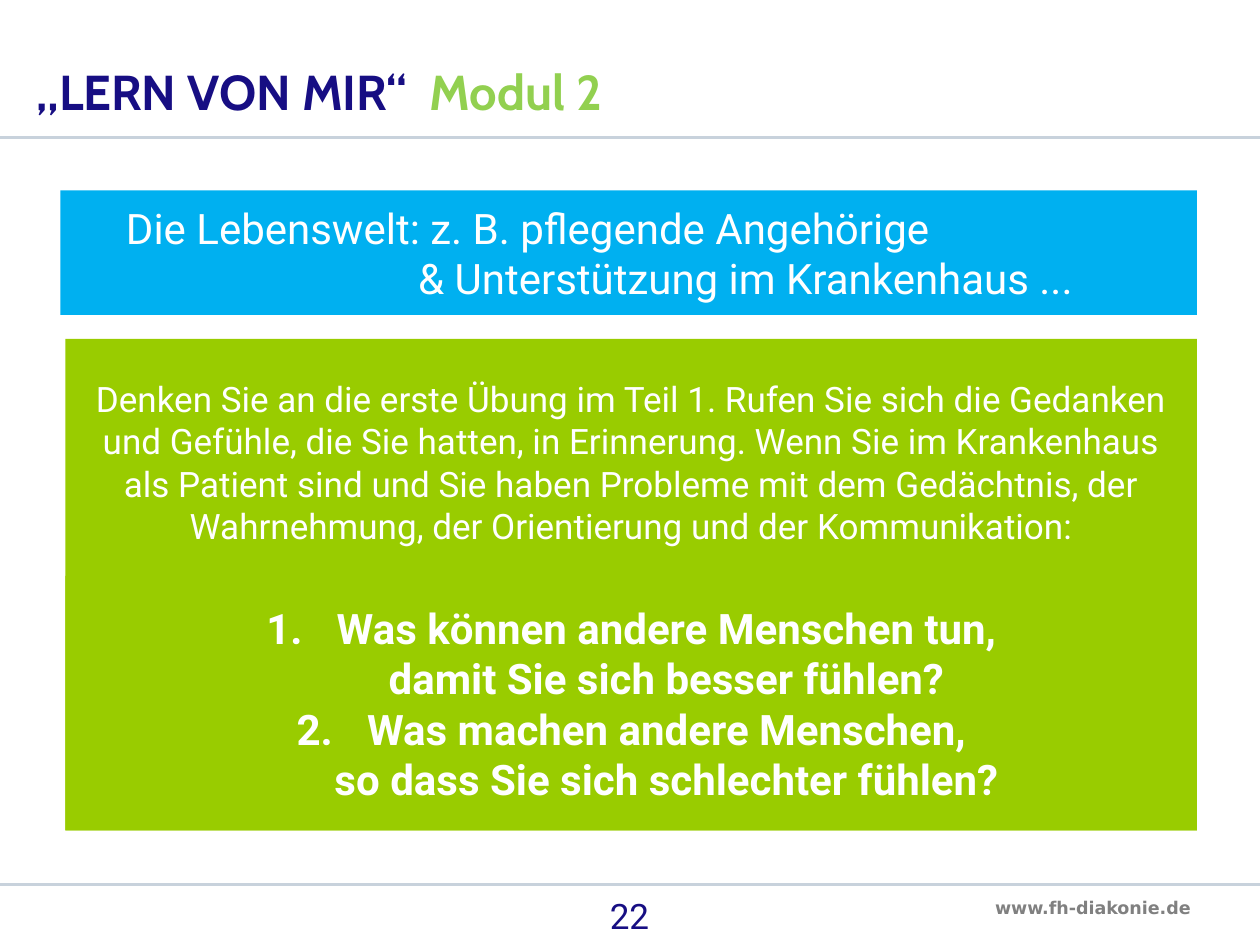
from dataclasses import dataclass

from lxml.etree import SubElement
from pptx import Presentation
from pptx.dml.color import RGBColor as Color
from pptx.enum.shapes import MSO_CONNECTOR as Connector, MSO_SHAPE as Shape
from pptx.enum.text import MSO_ANCHOR as Anchor, MSO_AUTO_SIZE as AutoSize, PP_ALIGN as Align
from pptx.oxml.ns import qn
from pptx.util import Cm, Pt


@dataclass(frozen=True)
class Theme:
    """Colours, fonts and type sizes of the slide."""
    navy: str = "170E83"
    light_green: str = "92D050"
    green: str = "99CC00"
    blue: str = "00B0F0"
    white: str = "FFFFFF"
    grey: str = "808080"
    rule: str = "C8D2DC"
    heading_font: str = "Cabin"
    body_font: str = "Roboto"
    footer_font: str = "DejaVu Sans"
    title_size: int = 28
    large_size: int = 24
    body_size: int = 20
    footer_size: int = 10


class SlideBuilder:
    """Holds the theme and the current slide."""

    def __init__(self, presentation, theme):
        """Add a title-only slide."""
        self.theme = theme
        self.slide = presentation.slides.add_slide(presentation.slide_layouts[5])

    def apply(self, target, values):
        """Set attributes from a dict of format values."""
        for name, value in values.items():
            setattr(target, name, value)

    def style(self, runs, size, color, font=None, bold=False):
        """Format text runs."""
        for run in runs:
            self.apply(run.font, {"name": font or self.theme.body_font,
                                  "size": Pt(size), "bold": bold})
            run.font.color.rgb = Color.from_string(color)

    def place(self, shape, box):
        """Move and size a shape, in centimetres."""
        self.apply(shape, dict(zip(("left", "top", "width", "height"), map(Cm, box))))

    def fill_text(self, frame, lines, align, **style):
        """Add one paragraph per line and return the paragraphs."""
        for index, line in enumerate(lines):
            paragraph = frame.add_paragraph() if index else frame.paragraphs[0]
            self.apply(paragraph, {"text": line, "alignment": align})
            self.style(paragraph.runs, **style)
        return frame.paragraphs

    def title(self, box, parts, tab):
        """Fill the title with coloured parts that are set apart by a tab stop."""
        shape = self.slide.shapes.title
        self.place(shape, box)
        self.apply(shape.text_frame, {"vertical_anchor": Anchor.BOTTOM,
                                      "auto_size": AutoSize.NONE, "word_wrap": True})
        paragraph = shape.text_frame.paragraphs[0]
        self.apply(paragraph, {"alignment": Align.LEFT, "line_spacing": 0.9,
                               "space_before": Pt(0)})
        stops = SubElement(paragraph._p.get_or_add_pPr(), qn("a:tabLst"))
        SubElement(stops, qn("a:tab"), pos=str(Cm(tab)), algn="l")
        for text, color in parts:
            run = paragraph.add_run()
            run.text = text
            self.style([run], self.theme.title_size, color, self.theme.heading_font, True)

    def rule(self, y):
        """Draw a full-width horizontal line."""
        line = self.slide.shapes.add_connector(
            Connector.STRAIGHT, Cm(0), Cm(y), Cm(25.4), Cm(y))
        line.line.color.rgb = Color.from_string(self.theme.rule)
        line.line.width = Pt(1.5)
        SubElement(line._element.spPr, qn("a:effectLst"))

    def panel(self, box, fill, lines, size, align=Align.CENTER, bold=False, **frame_format):
        """Draw a filled rectangle with white text and return its paragraphs."""
        shape = self.slide.shapes.add_shape(Shape.RECTANGLE, *map(Cm, box))
        shape.shadow.inherit = False
        shape.fill.solid()
        shape.fill.fore_color.rgb = Color.from_string(fill)
        shape.line.fill.background()
        self.apply(shape.text_frame, {"word_wrap": True, "vertical_anchor": Anchor.MIDDLE,
                                      **frame_format})
        return self.fill_text(shape.text_frame, lines, align,
                              size=size, color=self.theme.white, bold=bold)

    def indent(self, paragraph, left, hanging=0, numbered=False):
        """Indent a paragraph, with automatic numbers if wanted."""
        properties = paragraph._p.get_or_add_pPr()
        properties.set("marL", str(Cm(left)))
        properties.set("indent", str(-Cm(hanging)))
        if numbered:
            SubElement(properties, qn("a:buAutoNum"), type="arabicPeriod")

    def label(self, box, text, align=Align.LEFT, wrap=True, **style):
        """Add a plain text box."""
        frame = self.slide.shapes.add_textbox(*map(Cm, box)).text_frame
        frame.word_wrap = wrap
        self.fill_text(frame, [text], align, **style)


def main():
    """Build the slide and save it."""
    presentation = Presentation()
    presentation.slide_width, presentation.slide_height = Cm(25.4), Cm(19.05)
    theme = Theme()
    builder = SlideBuilder(presentation, theme)

    for y in (2.77, 17.83):
        builder.rule(y)
    builder.title((0.48, 1.09, 16.94, 1.47),
                  [("„LERN VON MIR“\t", theme.navy), ("Modul 2", theme.light_green)], 7.93)

    banner = builder.panel(
        (1.22, 3.84, 22.91, 2.51), theme.blue,
        ["Die Lebenswelt: z. B. pflegende Angehörige",
         "& Unterstützung im Krankenhaus ..."], theme.large_size, Align.LEFT)
    for paragraph, left in zip(banner, (1.07, 6.96)):
        builder.indent(paragraph, left)

    builder.panel(
        (1.32, 6.83, 22.81, 9.91), theme.green,
        ["Denken Sie an die erste Übung im Teil 1. Rufen Sie sich die Gedanken und Gefühle, "
         "die Sie hatten, in Erinnerung. Wenn Sie im Krankenhaus als Patient sind und Sie "
         "haben Probleme mit dem Gedächtnis, der Wahrnehmung, der Orientierung und der "
         "Kommunikation:"],
        theme.body_size, vertical_anchor=Anchor.TOP, margin_top=Cm(0.79))
    questions = builder.panel(
        (1.32, 11.61, 22.81, 5.13), theme.green,
        ["Was können andere Menschen tun,\vdamit Sie sich besser fühlen?",
         "Was machen andere Menschen,\vso dass Sie sich schlechter fühlen?"],
        theme.large_size, bold=True)
    for paragraph in questions:
        builder.indent(paragraph, 1.42, hanging=1.42, numbered=True)

    builder.label((9.73, 17.91, 5.92, 1.14), "22", Align.CENTER,
                  size=theme.body_size, color=theme.navy)
    builder.label((19.81, 17.96, 4.52, 0.69), "www.fh-diakonie.de", wrap=False,
                  size=theme.footer_size, color=theme.grey,
                  font=theme.footer_font, bold=True)
    presentation.save("out.pptx")


if __name__ == "__main__":
    main()
